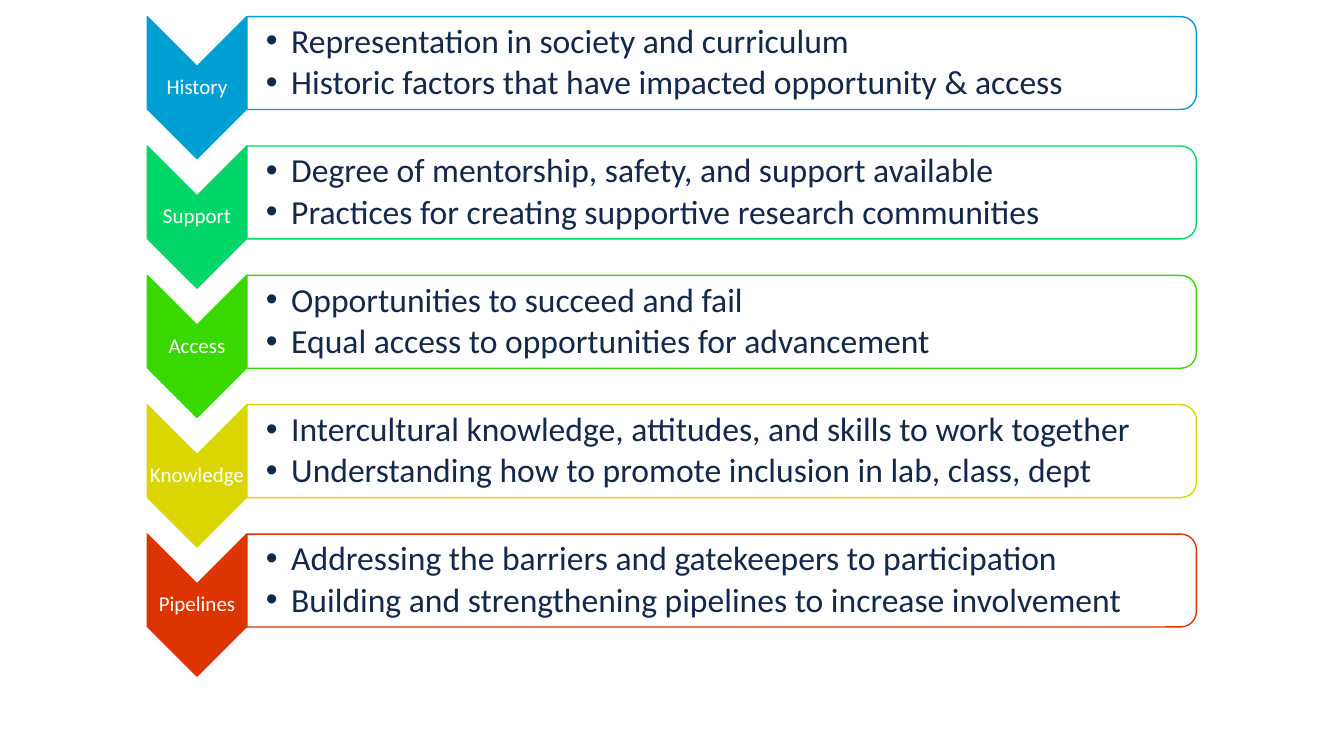
from lxml import etree
from pptx import Presentation
from pptx import util as u
from pptx.dml.color import RGBColor
from pptx.enum import shapes, text
from pptx.oxml.ns import qn

WHITE = RGBColor(0xFF, 0xFF, 0xFF)
NAVY = RGBColor(0x13, 0x28, 0x4B)
BLUE = RGBColor(0x00, 0x9F, 0xD3)
MINT = RGBColor(0x01, 0xD6, 0x69)
GREEN = RGBColor(0x3A, 0xD8, 0x01)
YELLOW = RGBColor(0xDB, 0xD6, 0x02)
RED = RGBColor(0xDD, 0x34, 0x03)

FONT = "Calibri"
LEFT, TOP, WIDTH = u.Cm(3.71), u.Cm(0.42), u.Cm(26.44)
ROW_PITCH = u.Cm(3.26)
CHEVRON_WIDTH, CHEVRON_HEIGHT = u.Cm(2.51), u.Cm(3.58)
PANEL_HEIGHT = u.Cm(2.34)
PANEL_TEXT_INSET = u.Cm(0.11)

THEMES = [
    ("History", BLUE, ["Representation in society and curriculum",
                       "Historic factors that have impacted opportunity & access"]),
    ("Support", MINT, ["Degree of mentorship, safety, and support available",
                       "Practices for creating supportive research communities"]),
    ("Access", GREEN, ["Opportunities to succeed and fail",
                       "Equal access to opportunities for advancement"]),
    ("Knowledge", YELLOW, ["Intercultural knowledge, attitudes, and skills to work together",
                           "Understanding how to promote inclusion in lab, class, dept"]),
    ("Pipelines", RED, ["Addressing the barriers and gatekeepers to participation",
                        "Building and strengthening pipelines to increase involvement"]),
]


def add_turned_shape(page, kind, left, top, width, height, fill, line):
    """Add a shape turned a quarter clockwise that fills the given box as seen."""
    shift = (width - height) // 2
    shape = page.shapes.add_shape(kind, left + shift, top - shift, height, width)
    shape.rotation = 90
    shape.shadow.inherit = False
    shape.fill.solid()
    shape.fill.fore_color.rgb = fill
    shape.line.color.rgb = line
    shape.line.width = u.Pt(1)
    return shape


def set_opacity(shape, percent):
    color = shape.fill._xPr.find(qn("a:solidFill"))[0]
    etree.SubElement(color, qn("a:alpha"), val=str(percent * 1000))


def add_bullet(para, indent):
    properties = para._p.get_or_add_pPr()
    properties.set("marL", str(indent))
    properties.set("indent", str(-indent))
    etree.SubElement(properties, qn("a:buFont"), typeface="Arial")
    etree.SubElement(properties, qn("a:buChar"), char="•")


def add_text(page, lines, left, top, width, height, *, size, color, margin,
             left_margin=None, align=text.PP_ALIGN.LEFT, after=0, bullet_indent=None):
    box = page.shapes.add_textbox(left, top, width, height)
    frame = box.text_frame
    frame.word_wrap = True
    frame.vertical_anchor = text.MSO_ANCHOR.MIDDLE
    frame.margin_top = frame.margin_right = frame.margin_bottom = margin
    frame.margin_left = margin if left_margin is None else left_margin
    for index, line in enumerate(lines):
        para = frame.add_paragraph() if index else frame.paragraphs[0]
        para.alignment = align
        para.line_spacing = 0.9
        para.space_after = u.Pt(after)
        if bullet_indent:
            add_bullet(para, bullet_indent)
        span = para.add_run()
        span.text = line
        span.font.name = FONT
        span.font.size = u.Pt(size)
        span.font.color.rgb = color


def add_chevron(page, label, color, left, top):
    add_turned_shape(page, shapes.MSO_SHAPE.CHEVRON, left, top,
                     CHEVRON_WIDTH, CHEVRON_HEIGHT, color, color)
    add_text(page, [label], left, top + CHEVRON_WIDTH // 2,
             CHEVRON_WIDTH, CHEVRON_HEIGHT - CHEVRON_WIDTH,
             size=15, color=WHITE, margin=u.Cm(0.03), align=text.PP_ALIGN.CENTER)


def add_panel(page, points, color, left, top, width):
    panel = add_turned_shape(page, shapes.MSO_SHAPE.ROUND_2_SAME_RECTANGLE,
                             left, top, width, PANEL_HEIGHT, WHITE, color)
    set_opacity(panel, 90)
    add_text(page, points, left, top + PANEL_TEXT_INSET,
             width - PANEL_TEXT_INSET, PANEL_HEIGHT - 2 * PANEL_TEXT_INSET,
             size=24, color=NAVY, margin=u.Cm(0.04), left_margin=u.Cm(0.48),
             after=3.6, bullet_indent=u.Cm(0.64))


def add_theme_list(page, left, top, width):
    for row, (label, color, points) in enumerate(THEMES):
        row_top = top + row * ROW_PITCH
        add_chevron(page, label, color, left, row_top)
        add_panel(page, points, color, left + CHEVRON_WIDTH, row_top,
                  width - CHEVRON_WIDTH)


def main():
    deck = Presentation()
    deck.slide_width, deck.slide_height = u.Cm(33.87), u.Cm(19.05)
    page = deck.slides.add_slide(deck.slide_layouts[6])
    add_theme_list(page, LEFT, TOP, WIDTH)
    deck.save("out.pptx")


if __name__ == "__main__":
    main()
